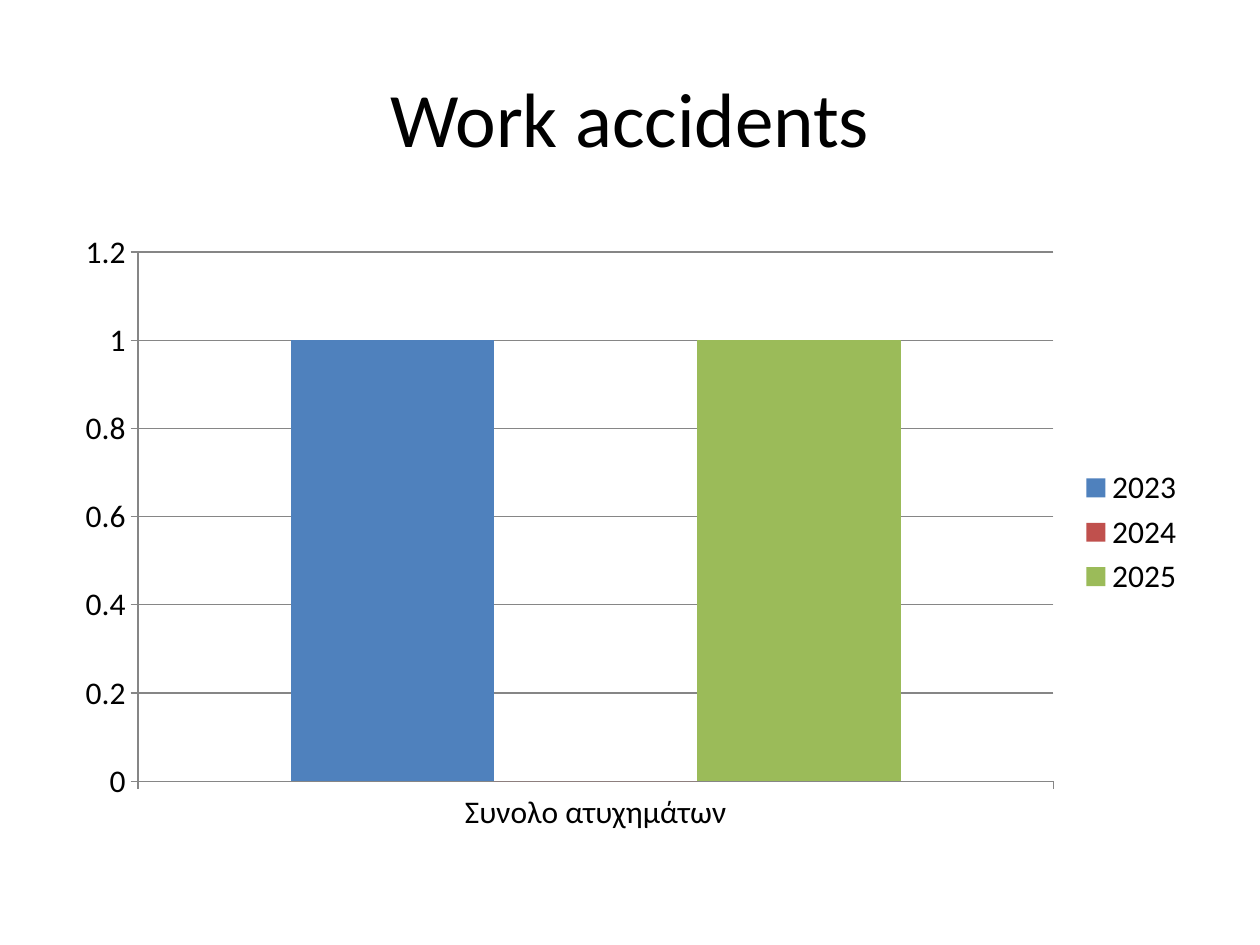
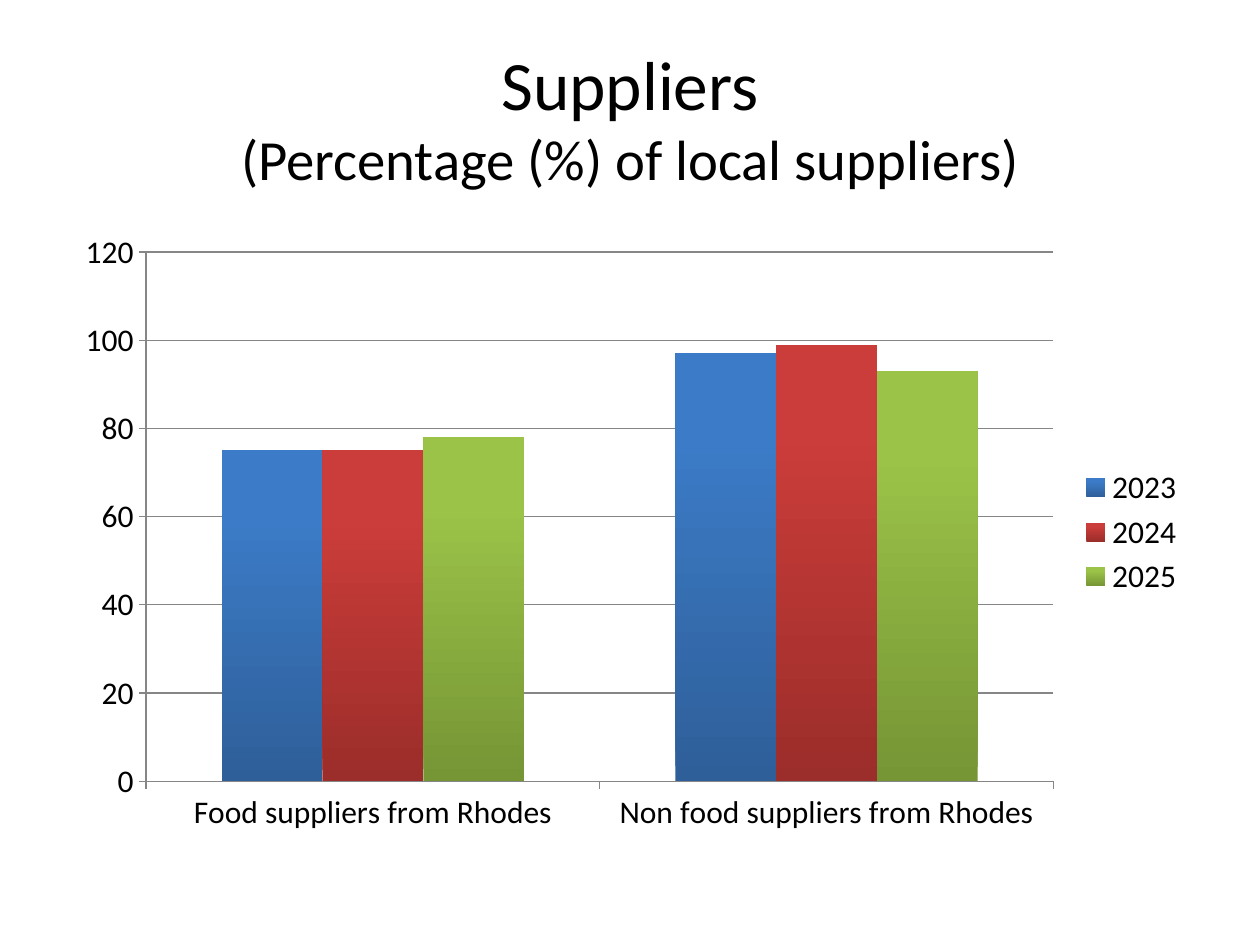
from pptx import Presentation
from pptx.chart.data import CategoryChartData
from pptx.dml.color import RGBColor
from pptx.enum import chart as chart_enum, text
from pptx.util import Inches, Pt

FONT = "Calibri"
COLORS = {"text": "000000", "axis": "868686", "background": "FFFFFF"}
YEARS = {
    "2023": {"flat": "4F81BD", "dark": "2E5F99", "bright": "3C7BC7"},
    "2024": {"flat": "C0504D", "dark": "9B2D2A", "bright": "CB3D3A"},
    "2025": {"flat": "9BBB59", "dark": "769535", "bright": "9BC348"},
}


def rgb(name):
    return RGBColor.from_string(COLORS.get(name, name))


class Deck:
    def __init__(self):
        self.presentation = Presentation()
        self.presentation.slide_width = Inches(10)
        self.presentation.slide_height = Inches(7.5)
        self.slide = None

    def add_slide(self):
        self.slide = self.presentation.slides.add_slide(self.presentation.slide_layouts[6])
        background = self.slide.background.fill
        background.solid()
        background.fore_color.rgb = rgb("background")

    def style_font(self, font, size):
        font.name = FONT
        font.size = Pt(size)
        font.color.rgb = rgb("text")

    def add_title(self, lines, sizes):
        box = self.slide.shapes.add_textbox(Inches(0.5), Inches(0.3), Inches(9), Inches(1.25))
        frame = box.text_frame
        frame.word_wrap = True
        frame.vertical_anchor = text.MSO_ANCHOR.MIDDLE
        paragraph = frame.paragraphs[0]
        paragraph.text = "\v".join(lines)
        paragraph.alignment = text.PP_ALIGN.CENTER
        for run, size in zip(paragraph.runs, sizes):
            self.style_font(run.font, size)

    def fill_series(self, series, gradient):
        shades = YEARS[series.name]
        fill = series.format.fill
        if gradient:
            fill.gradient()
            fill.gradient_angle = 90
            bottom, top = fill.gradient_stops
            bottom.color.rgb = rgb(shades["dark"])
            top.color.rgb = rgb(shades["bright"])
            top.position = 0.8
        else:
            fill.solid()
            fill.fore_color.rgb = rgb(shades["flat"])

    def style_axis(self, axis):
        axis.major_tick_mark = chart_enum.XL_TICK_MARK.OUTSIDE
        axis.minor_tick_mark = chart_enum.XL_TICK_MARK.NONE
        axis.format.line.color.rgb = rgb("axis")
        axis.format.line.width = Pt(0.75)

    def add_column_chart(self, categories, values, gradient=False):
        data = CategoryChartData()
        data.categories = categories
        for year, year_values in zip(YEARS, values):
            data.add_series(year, year_values)
        chart = self.slide.shapes.add_chart(
            chart_enum.XL_CHART_TYPE.COLUMN_CLUSTERED,
            Inches(0.5), Inches(1.75), Inches(9), Inches(4.95), data,
        ).chart
        self.style_font(chart.font, 18)
        chart.has_title = False
        chart.has_legend = True
        chart.legend.position = chart_enum.XL_LEGEND_POSITION.RIGHT
        chart.legend.include_in_layout = False
        for axis in (chart.category_axis, chart.value_axis):
            self.style_axis(axis)
        chart.value_axis.has_major_gridlines = True
        gridline = chart.value_axis.major_gridlines.format.line
        gridline.color.rgb = rgb("axis")
        gridline.width = Pt(0.75)
        plot = chart.plots[0]
        plot.gap_width = 150
        plot.vary_by_categories = False
        for series in plot.series:
            self.fill_series(series, gradient)


def main():
    deck = Deck()

    deck.add_slide()
    deck.add_title(["Work accidents"], [44])
    deck.add_column_chart(["Συνολο ατυχημάτων"], [[1], [0], [1]])

    deck.add_slide()
    deck.add_title(["Suppliers", "(Percentage (%) of local suppliers)"], [39.6, 32.4])
    deck.add_column_chart(
        ["Food suppliers from Rhodes", "Non food suppliers from Rhodes"],
        [[75, 97], [75, 99], [78, 93]],
        gradient=True,
    )

    deck.presentation.save("out.pptx")


if __name__ == "__main__":
    main()
